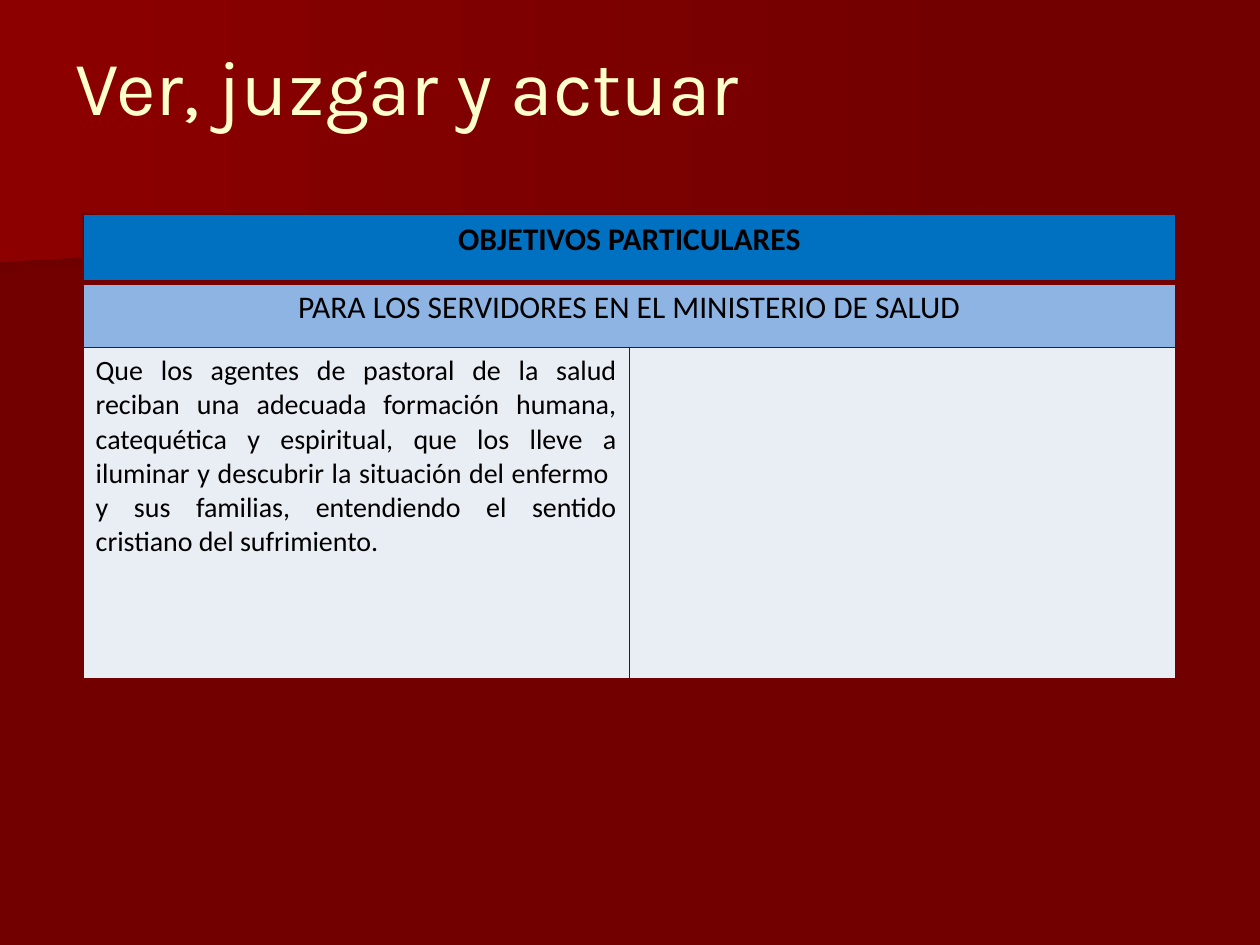
from lxml.etree import SubElement
from pptx import Presentation
from pptx.dml.color import RGBColor
from pptx.enum.text import MSO_ANCHOR, PP_ALIGN
from pptx.oxml.ns import qn
from pptx.util import Inches, Pt

MAROON = RGBColor(0x72, 0x00, 0x00)
DARK_MAROON = RGBColor(0x6F, 0x00, 0x00)
RED = RGBColor(0x8C, 0x00, 0x00)
CREAM = RGBColor(0xFF, 0xFF, 0xCC)
BLACK = RGBColor(0x00, 0x00, 0x00)
BLUE = RGBColor(0x00, 0x70, 0xC0)
LIGHT_BLUE = RGBColor(0x8E, 0xB4, 0xE3)
PALE = RGBColor(0xE9, 0xED, 0xF4)

OBJECTIVE = (
    "Que los agentes de pastoral de la salud reciban una adecuada formación "
    "humana, catequética y espiritual, que los lleve a iluminar y descubrir la "
    "situación del enfermo  y sus familias, entendiendo el sentido cristiano "
    "del sufrimiento."
)


def add_band(s, points, start_color):
    """Background polygon that fades from left to right into the maroon."""
    builder = s.shapes.build_freeform(
        *(Inches(v) for v in points[0]), scale=1.0)
    builder.add_line_segments([(Inches(x), Inches(y)) for x, y in points[1:]])
    sp = builder.convert_to_shape()
    sp.shadow.inherit = False
    sp.line.fill.background()
    sp.fill.gradient()
    sp.fill.gradient_angle = 0
    for stop, color in zip(sp.fill.gradient_stops, (start_color, MAROON)):
        stop.color.rgb = color


def add_run(p, text, font, size, color, bold=False):
    r = p.add_run()
    r.text = text
    r.font.name = font
    r.font.size = Pt(size)
    r.font.bold = bold
    r.font.color.rgb = color


def add_title(s, text):
    tf = s.shapes.add_textbox(
        Inches(0.5), Inches(0.05), Inches(9), Inches(1.25)).text_frame
    tf.word_wrap = True
    tf.vertical_anchor = MSO_ANCHOR.MIDDLE
    add_run(tf.paragraphs[0], text, "Karla", 44, CREAM)


def style_cell(cell, fill, top=1, bottom=1):
    """Set the borders (points), then the fill, in schema order."""
    tcPr = cell._tc.get_or_add_tcPr()
    for side, width in (("L", 1), ("R", 1), ("T", top), ("B", bottom)):
        ln = SubElement(tcPr, qn(f"a:ln{side}"), w=str(Pt(width)))
        solid = SubElement(ln, qn("a:solidFill"))
        SubElement(solid, qn("a:srgbClr"), val=str(MAROON))
    cell.fill.solid()
    cell.fill.fore_color.rgb = fill


def fill_cell(cell, text, size, align, bold=False):
    p = cell.text_frame.paragraphs[0]
    p.alignment = align
    add_run(p, text, "Calibri", size, BLACK, bold)


def add_objectives(s):
    table = s.shapes.add_table(
        3, 2, Inches(0.66), Inches(1.7), Inches(8.67), Inches(3.69)).table
    for row, height in zip(table.rows, (0.54, 0.52, 2.63)):
        row.height = Inches(height)

    # Row fills, with a thick rule under the heading
    for row, style in zip(table.rows, (
            dict(fill=BLUE, bottom=3),
            dict(fill=LIGHT_BLUE, top=3),
            dict(fill=PALE))):
        for cell in row.cells:
            style_cell(cell, **style)

    # The two heading rows span the table
    for i in range(2):
        table.cell(i, 0).merge(table.cell(i, 1))

    fill_cell(table.cell(0, 0), "OBJETIVOS PARTICULARES", 18,
              PP_ALIGN.CENTER, bold=True)
    fill_cell(table.cell(1, 0), "PARA LOS SERVIDORES EN EL MINISTERIO DE SALUD",
              18, PP_ALIGN.CENTER)
    fill_cell(table.cell(2, 0), OBJECTIVE, 16, PP_ALIGN.JUSTIFY)


def main():
    prs = Presentation()
    prs.slide_width, prs.slide_height = Inches(10), Inches(7.5)
    s = prs.slides.add_slide(prs.slide_layouts[6])

    # Background
    s.background.fill.solid()
    s.background.fill.fore_color.rgb = MAROON
    add_band(s, [(7.78, 1.53), (0, 2.17), (0, 1.01), (7.79, 1.01)], DARK_MAROON)
    add_band(s, [(7.92, 1.62), (0, 2.08), (0, 0), (7.92, 0)], RED)

    # Content
    add_title(s, "Ver, juzgar y actuar")
    add_objectives(s)
    prs.save("out.pptx")


if __name__ == "__main__":
    main()
